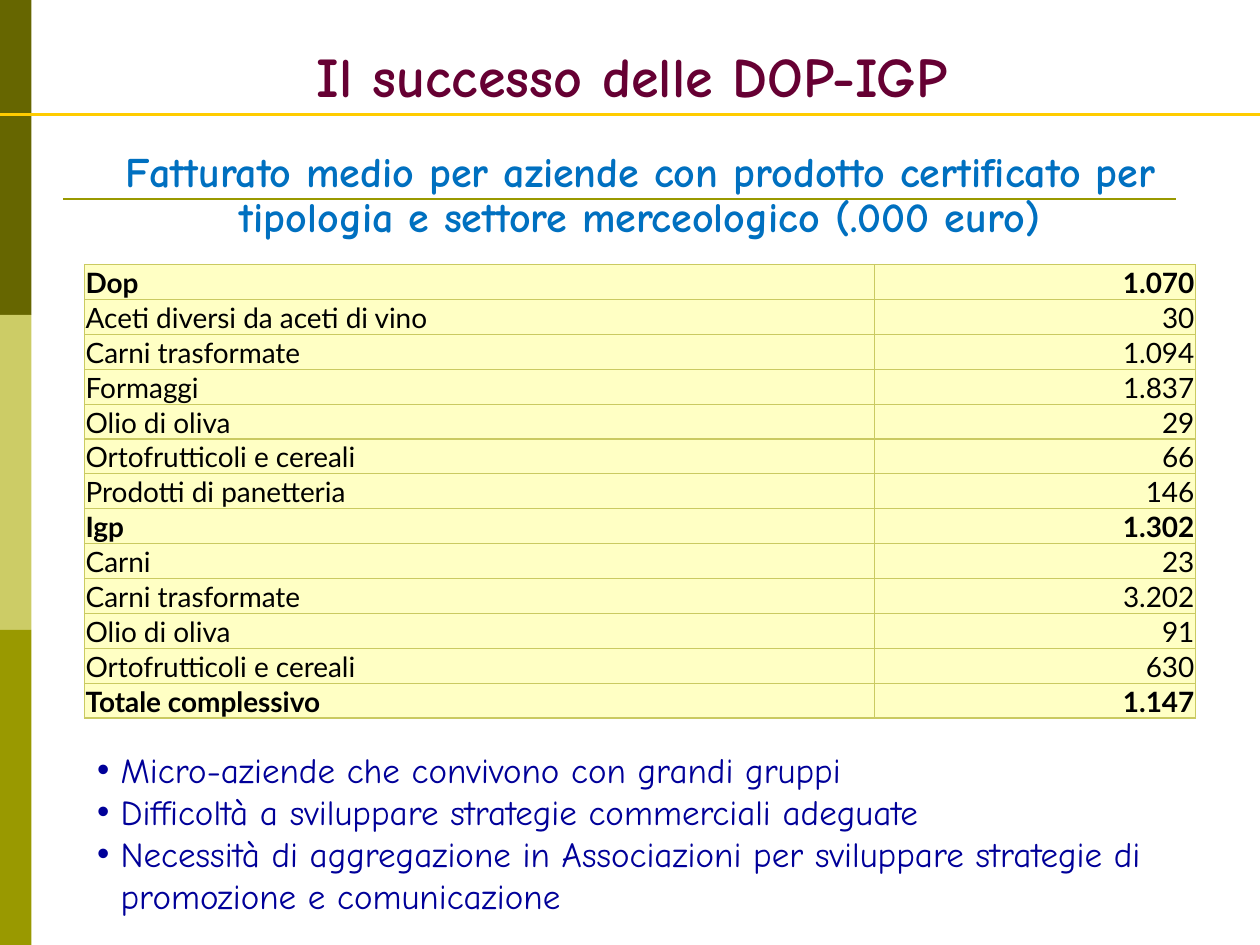
from dataclasses import dataclass

import lxml.etree
import pptx
import pptx.dml.color
import pptx.enum.shapes
import pptx.enum.text
import pptx.oxml
import pptx.oxml.ns
import pptx.util

Pt = pptx.util.Pt
Align = pptx.enum.text.PP_ALIGN
Anchor = pptx.enum.text.MSO_ANCHOR


@dataclass(frozen=True)
class Theme:
    heading_font: str = "Comic Neue"
    table_font: str = "Lato"
    title_size: int = 32
    subtitle_size: int = 24
    body_size: int = 20
    table_size: int = 16
    title: str = "660033"
    subtitle: str = "0070C0"
    body: str = "000099"
    table_text: str = "000000"
    table_fill: str = "FFFFC4"
    table_border: str = "CACA61"
    title_rule: str = "FFCC00"
    subtitle_rule: str = "999900"
    bands: tuple = ("666600", "CCCC66", "999900")


THEME = Theme()
SLIDE_WIDTH, SLIDE_HEIGHT = 720, 540
TABLE_LEFT, TABLE_TOP, TABLE_HEIGHT = 48.24, 151.2, 259.2
COLUMN_WIDTHS = (451.5, 183.5)
CELL_INSET = 0.72
BULLET_INDENT = 13.5

TITLE = "Il successo delle DOP-IGP"
SUBTITLE = ("Fatturato medio per aziende con prodotto certificato per "
            "tipologia e settore merceologico (.000 euro)")
TURNOVER = (
    ("Dop", "1.070"),
    ("Aceti diversi da aceti di vino", "30"),
    ("Carni trasformate", "1.094"),
    ("Formaggi", "1.837"),
    ("Olio di oliva", "29"),
    ("Ortofrutticoli e cereali", "66"),
    ("Prodotti di panetteria", "146"),
    ("Igp", "1.302"),
    ("Carni", "23"),
    ("Carni trasformate", "3.202"),
    ("Olio di oliva", "91"),
    ("Ortofrutticoli e cereali", "630"),
    ("Totale complessivo", "1.147"),
)
SUMMARY_ROWS = {"Dop", "Igp", "Totale complessivo"}
POINTS = (
    "Micro-aziende che convivono con grandi gruppi",
    "Difficoltà a sviluppare strategie commerciali adeguate",
    "Necessità di aggregazione in Associazioni per sviluppare strategie di "
    "promozione e comunicazione",
)


def rgb(value):
    return pptx.dml.color.RGBColor.from_string(value)


def write(paragraph, text, *, font, size, color, bold=False,
          align=Align.LEFT, spacing=1.0):
    """Put one formatted run of text in a paragraph."""
    paragraph.alignment = align
    paragraph.line_spacing = spacing
    paragraph.space_before = Pt(0)
    run = paragraph.add_run()
    run.text = text
    run.font.name = font
    run.font.size = Pt(size)
    run.font.bold = bold
    run.font.color.rgb = rgb(color)


def place(shape, left, top, width, height, anchor=Anchor.TOP):
    shape.left, shape.top = Pt(left), Pt(top)
    shape.width, shape.height = Pt(width), Pt(height)
    frame = shape.text_frame
    frame.auto_size = pptx.enum.text.MSO_AUTO_SIZE.NONE
    frame.word_wrap = True
    frame.vertical_anchor = anchor
    return frame


def add_bands(slide):
    height = SLIDE_HEIGHT / len(THEME.bands)
    for index, color in enumerate(THEME.bands):
        band = slide.shapes.add_shape(
            pptx.enum.shapes.MSO_SHAPE.RECTANGLE,
            Pt(0), Pt(index * height), Pt(18), Pt(height))
        band.shadow.inherit = False
        band.fill.solid()
        band.fill.fore_color.rgb = rgb(color)
        band.line.fill.background()


def add_rule(slide, left, right, top, color, width):
    rule = slide.shapes.add_connector(
        pptx.enum.shapes.MSO_CONNECTOR.STRAIGHT,
        Pt(left), Pt(top), Pt(right), Pt(top))
    rule.line.color.rgb = rgb(color)
    rule.line.width = Pt(width)
    properties = rule.element.spPr
    lxml.etree.SubElement(properties, pptx.oxml.ns.qn("a:effectLst"))


def add_title(slide):
    frame = place(slide.shapes.title, 33.84, 20.16, 655.2, 46)
    write(frame.paragraphs[0], TITLE, font=THEME.heading_font,
          size=THEME.title_size, color=THEME.title, bold=True,
          align=Align.CENTER)


def add_subtitle(slide):
    box = slide.shapes.add_textbox(0, 0, 0, 0)
    frame = place(box, 36.72, 82.8, 658, 62.64)
    write(frame.paragraphs[0], SUBTITLE, font=THEME.heading_font,
          size=THEME.subtitle_size, color=THEME.subtitle, bold=True,
          align=Align.CENTER, spacing=0.9)


def add_bullet(paragraph):
    properties = paragraph._p.get_or_add_pPr()
    properties.set("marL", str(Pt(BULLET_INDENT)))
    properties.set("indent", str(-Pt(BULLET_INDENT)))
    bullet = lxml.etree.SubElement(properties, pptx.oxml.ns.qn("a:buChar"))
    bullet.set("char", "•")


def add_points(slide):
    frame = place(slide.placeholders[1], 48.24, 423.36, 629.28, 104.4,
                  Anchor.MIDDLE)
    for index, text in enumerate(POINTS):
        paragraph = frame.add_paragraph() if index else frame.paragraphs[0]
        write(paragraph, text, font=THEME.heading_font,
              size=THEME.body_size, color=THEME.body)
        add_bullet(paragraph)


def format_cell(cell):
    properties = cell._tc.get_or_add_tcPr()
    for side in ("lnL", "lnR", "lnT", "lnB"):
        properties.append(pptx.oxml.parse_xml(
            f'<a:{side} {pptx.oxml.ns.nsdecls("a")} w="{Pt(0.75)}">'
            f'<a:solidFill><a:srgbClr val="{THEME.table_border}"/>'
            f'</a:solidFill></a:{side}>'))
    cell.fill.solid()
    cell.fill.fore_color.rgb = rgb(THEME.table_fill)
    cell.margin_left = cell.margin_right = cell.margin_top = Pt(CELL_INSET)
    cell.margin_bottom = Pt(0)
    cell.vertical_anchor = Anchor.BOTTOM


def add_turnover_table(slide):
    table = slide.shapes.add_table(
        len(TURNOVER), len(COLUMN_WIDTHS), Pt(TABLE_LEFT), Pt(TABLE_TOP),
        Pt(sum(COLUMN_WIDTHS)), Pt(TABLE_HEIGHT)).table
    table.first_row = table.horz_banding = False
    for column, width in zip(table.columns, COLUMN_WIDTHS):
        column.width = Pt(width)
    for row, values in zip(table.rows, TURNOVER):
        for cell, text, align in zip(row.cells, values,
                                     (Align.LEFT, Align.RIGHT)):
            format_cell(cell)
            write(cell.text_frame.paragraphs[0], text,
                  font=THEME.table_font, size=THEME.table_size,
                  color=THEME.table_text, align=align,
                  bold=values[0] in SUMMARY_ROWS)


def main():
    """Build the slide on certified product turnover and save it."""
    presentation = pptx.Presentation()
    presentation.slide_width = Pt(SLIDE_WIDTH)
    presentation.slide_height = Pt(SLIDE_HEIGHT)
    slide = presentation.slides.add_slide(presentation.slide_layouts[1])
    add_bands(slide)
    add_rule(slide, 36, 672, 113.76, THEME.subtitle_rule, 1.5)
    add_title(slide)
    add_rule(slide, 0, SLIDE_WIDTH, 65.52, THEME.title_rule, 2)
    add_points(slide)
    add_subtitle(slide)
    add_turnover_table(slide)
    presentation.save("out.pptx")


if __name__ == "__main__":
    main()
